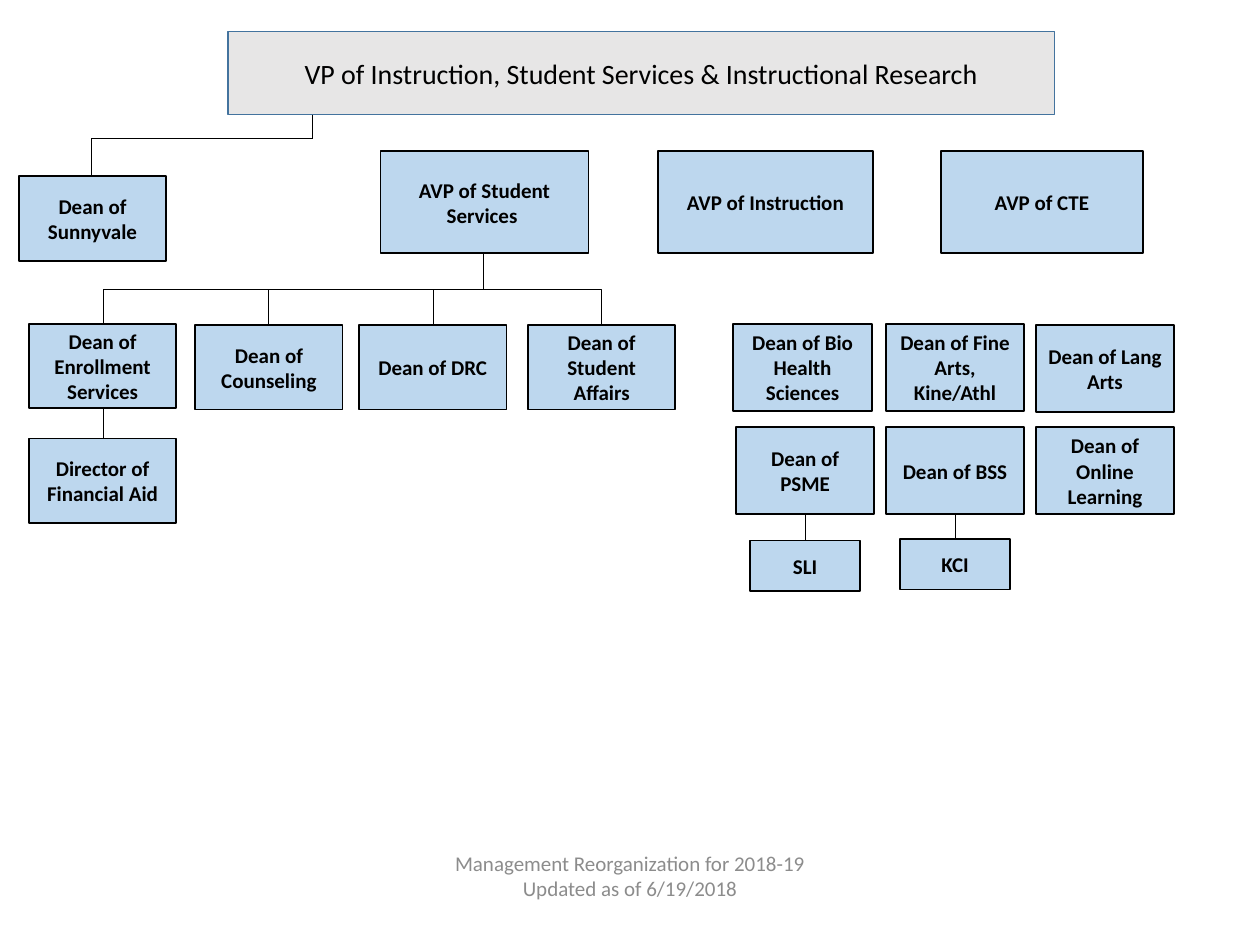
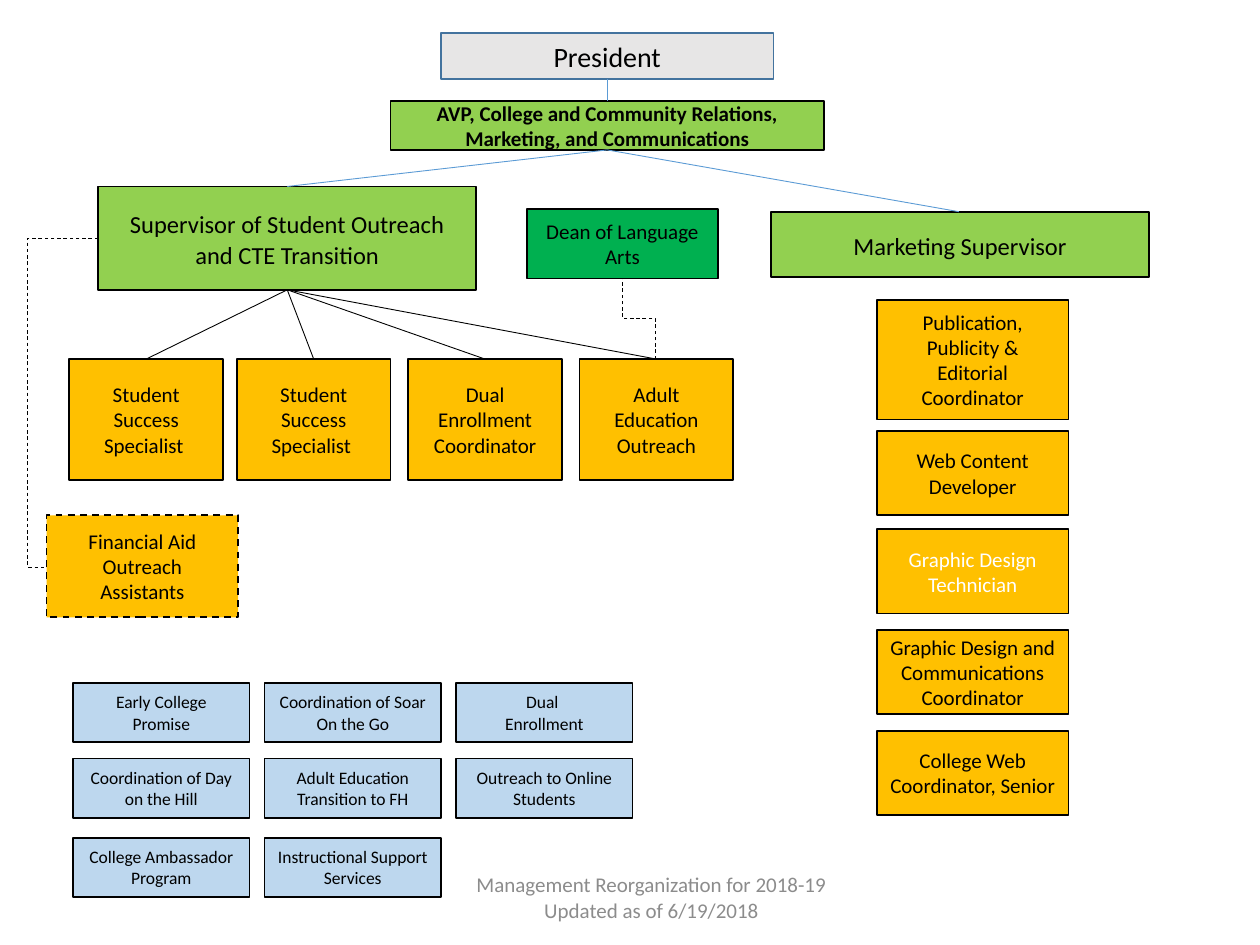
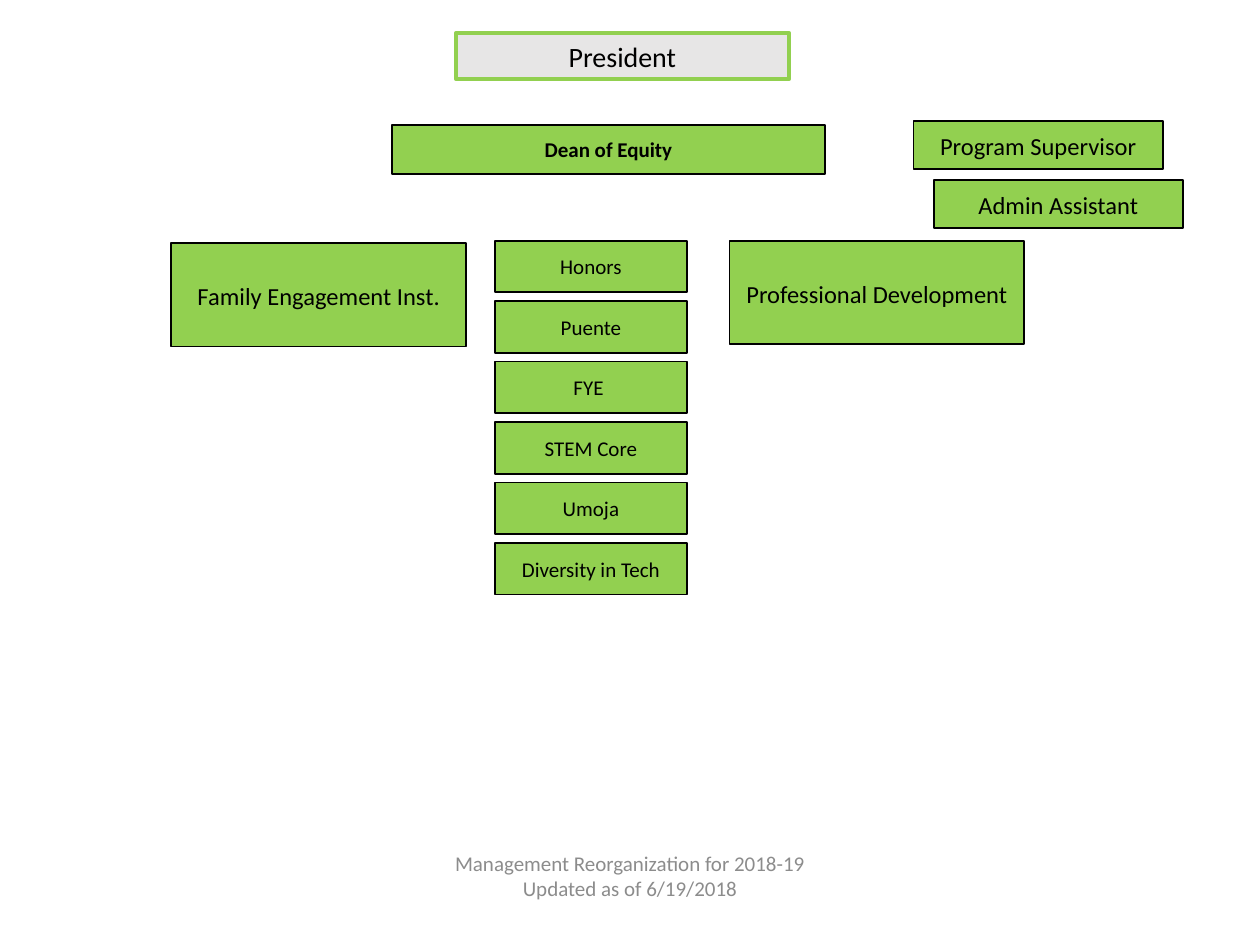
from pptx import Presentation
from pptx.dml.color import RGBColor
from pptx.enum.dml import MSO_LINE
from pptx.enum.shapes import MSO_CONNECTOR as MC, MSO_SHAPE
from pptx.enum.text import MSO_ANCHOR, PP_ALIGN
from pptx.util import Inches, Pt
from lxml import etree

C = {
    "black": "000000", "white": "FFFFFF", "grey": "E7E6E6", "steel": "43739E",
    "sky": "BDD7EE", "lime": "92D050", "green": "00B050", "amber": "FFC000",
    "blue": "5B9BD5", "muted": "8C8C8C",
}
FONT = "Calibri"
FOOTER = "Management Reorganization for 2018-19\nUpdated as of 6/19/2018"

prs = Presentation()
prs.slide_width, prs.slide_height = Inches(10), Inches(7.5)
COL = prs.slide_width / 100
ROW = prs.slide_height / 75


def box(s, text, x, y, w, h, fill=None, size=12, bold=False, color="black",
        edge="black", weight=1, dash=False):
    frame = [round(v) for v in (x * COL, y * ROW, w * COL, h * ROW)]
    if fill:
        sp = s.shapes.add_shape(MSO_SHAPE.RECTANGLE, *frame)
        sp.shadow.inherit = False
        sp.fill.solid()
        sp.fill.fore_color.rgb = RGBColor.from_string(C[fill])
        sp.line.color.rgb = RGBColor.from_string(C[edge])
        sp.line.width = Pt(weight)
        if dash:
            sp.line.dash_style = MSO_LINE.DASH
    else:
        sp = s.shapes.add_textbox(*frame)
        sp.text_frame.margin_top = sp.text_frame.margin_bottom = 0
    tf = sp.text_frame
    tf.word_wrap = True
    tf.vertical_anchor = MSO_ANCHOR.MIDDLE
    tf.text = text
    for p in tf.paragraphs:
        p.alignment = PP_ALIGN.CENTER
        if size == 14:
            p.line_spacing, p.space_after = 1.07, Pt(8)
        for r in p.runs:
            r.font.name, r.font.size, r.font.bold = FONT, Pt(size), bold
            r.font.color.rgb = RGBColor.from_string(C[color])


def link(s, x1, y1, x2, y2, kind="line", color="black", dash=False, adj=None):
    if kind == "vertical":
        cx, cy, dx, dy = (x1 + x2) / 2, (y1 + y2) / 2, (x2 - x1) / 2, (y2 - y1) / 2
        x1, y1, x2, y2 = cx - dy, cy + dx, cx + dy, cy - dx
    ends = [round(v) for v in (x1 * COL, y1 * ROW, x2 * COL, y2 * ROW)]
    cn = s.shapes.add_connector(MC.STRAIGHT if kind == "line" else MC.ELBOW, *ends)
    cn.line.color.rgb = RGBColor.from_string(C[color])
    cn.line.width = Pt(0.5)
    if dash:
        cn.line.dash_style = MSO_LINE.DASH
    pr = cn._element.spPr
    if kind == "vertical":
        pr.xfrm.set("rot", "5400000")
    if kind == "corner":
        pr.prstGeom.set("prst", "bentConnector2")
    if adj:
        cn._element.spPr.prstGeom.get_or_add_avLst()
        ns = pr.nsmap["a"]
        gd = etree.SubElement(pr.prstGeom.avLst, f"{{{ns}}}gd")
        gd.set("name", "adj1")
        gd.set("fmla", f"val {adj}")
    etree.SubElement(pr, f"{{{pr.nsmap['a']}}}effectLst")


slides = []
for x, y in [(33.1, 67.5), (34.8, 69.2), (33.1, 67.5)]:
    s = prs.slides.add_slide(prs.slide_layouts[6])
    box(s, FOOTER, x, y, 33.8, 4, color="muted")
    slides.append(s)
instruction, outreach, equity = slides

s = instruction
box(s, "VP of Instruction, Student Services & Instructional Research",
    18.1, 2.5, 65.6, 6.6, "grey", 16, edge="steel")
link(s, 24.8, 9.1, 24.8, 11)
link(s, 24.8, 11, 7.3, 14, "corner")
for text, x, w in [("AVP of Student Services ", 30.2, 16.5),
                   ("AVP of Instruction", 52.2, 17.1), ("AVP of CTE", 74.7, 16)]:
    box(s, text, x, 12, w, 8.1, "sky", bold=True)

for text, x, y in [("Dean of Sunnyvale", 1.5, 14),
                   ("Dean of Enrollment Services", 2.3, 25.7),
                   ("Dean of Counseling", 15.5, 25.8), ("Dean of DRC", 28.5, 25.8),
                   ("Dean of Student Affairs", 41.9, 25.8),
                   ("Director of Financial Aid", 2.3, 34.8)]:
    box(s, text, x, y, 11.7, 6.7, "sky", bold=True)
for x in (8.2, 21.3):
    link(s, 38.4, 23, x, 25.8, "corner")
for x in (34.4, 47.7):
    link(s, 38.4, 20.1, x, 25.8, "vertical")
link(s, 8.2, 32.4, 8.2, 34.8)

for text, x, y in [("Dean of Bio Health Sciences", 58.2, 25.7),
                   ("Dean of Fine Arts, Kine/Athl", 70.3, 25.7),
                   ("Dean of Lang Arts", 82.2, 25.8), ("Dean of PSME", 58.4, 33.9),
                   ("Dean of BSS", 70.3, 33.9), ("Dean of Online Learning", 82.2, 33.9)]:
    box(s, text, x, y, 11, 6.9, "sky", bold=True)
for text, x, y in [("SLI", 63.9, 42.9), ("KCI", 75.8, 42.8)]:
    link(s, x, 40.8, x, y)
    box(s, text, x - 4.35, y, 8.7, 4, "sky", bold=True)

s = outreach
box(s, "President", 35, 2.6, 26.4, 3.7, "grey", 16, edge="steel")
box(s, "AVP, College and Community Relations, Marketing, and Communications",
    31, 8, 34.4, 3.9, "lime", bold=True)
link(s, 7.8, 18.9, 3.7, 45, "horizontal", dash=True, adj=136700)
box(s, "Supervisor of Student Outreach and CTE Transition", 7.8, 14.8, 30, 8.2, "lime", 14)
box(s, "Marketing Supervisor", 61.2, 16.8, 30, 5.2, "lime", 14)
for x1, y1, x2, y2 in [(48.2, 8, 48.2, 6.3), (22.8, 14.8, 48.2, 11.9),
                       (48.2, 11.9, 76.1, 16.8)]:
    link(s, x1, y1, x2, y2, color="blue")

for text, x in [("Student Success Specialist ", 5.5), ("Student Success Specialist ", 18.8),
                ("Dual Enrollment Coordinator", 32.4), ("Adult Education Outreach", 46)]:
    link(s, 22.8, 23, x + 6.1, 28.5)
    box(s, text, x, 28.5, 12.2, 9.6, "amber")
link(s, 52, 28.5, 49.4, 22, "vertical", dash=True)
box(s, "Dean of Language Arts", 41.8, 16.6, 15.2, 5.5, "green")
box(s, "Financial Aid Outreach Assistants", 3.7, 40.9, 15.2, 8.1, "amber", dash=True)

for text, y, h, color in [
        ("Publication, Publicity & Editorial Coordinator", 23.8, 9.5, "black"),
        ("Web Content Developer", 34.2, 6.7, "black"),
        ("Graphic Design Technician", 42, 6.7, "white"),
        ("Graphic Design and Communications Coordinator", 50, 6.7, "black"),
        ("College Web Coordinator, Senior", 58, 6.7, "black")]:
    box(s, text, 69.6, y, 15.2, h, "amber", color=color)

programs = [
    (54.2, ["Early College Promise", "Coordination of Soar On the Go", "Dual \nEnrollment"]),
    (60.2, ["Coordination of Day on the Hill", "Adult Education Transition to FH",
            "Outreach to Online Students"]),
    (66.5, ["College Ambassador Program", "Instructional Support Services"]),
]
for y, texts in programs:
    for i, text in enumerate(texts):
        box(s, text, 5.8 + 15.2 * i, y, 14, 4.7, "sky", 10)

s = equity
box(s, "President", 36.2, 2.6, 26.4, 3.7, "grey", 16, edge="lime", weight=2.25)
box(s, "Dean of Equity", 31.1, 9.9, 34.4, 3.9, "lime", bold=True)
for text, x, y, w, h in [("Program Supervisor", 72.5, 9.6, 19.8, 3.8),
                         ("Admin Assistant", 74.1, 14.3, 19.8, 3.8),
                         ("Family Engagement Inst.", 13.6, 19.3, 23.4, 8.2),
                         ("Professional Development", 57.9, 19.1, 23.4, 8.2)]:
    box(s, text, x, y, w, h, "lime", 14)
for i, text in enumerate(["Honors", "Puente", "FYE ", "STEM Core", "Umoja",
                          "Diversity in Tech"]):
    box(s, text, 39.3, 19.1 + 4.8 * i, 15.2, 4.1, "lime")

prs.save("out.pptx")
